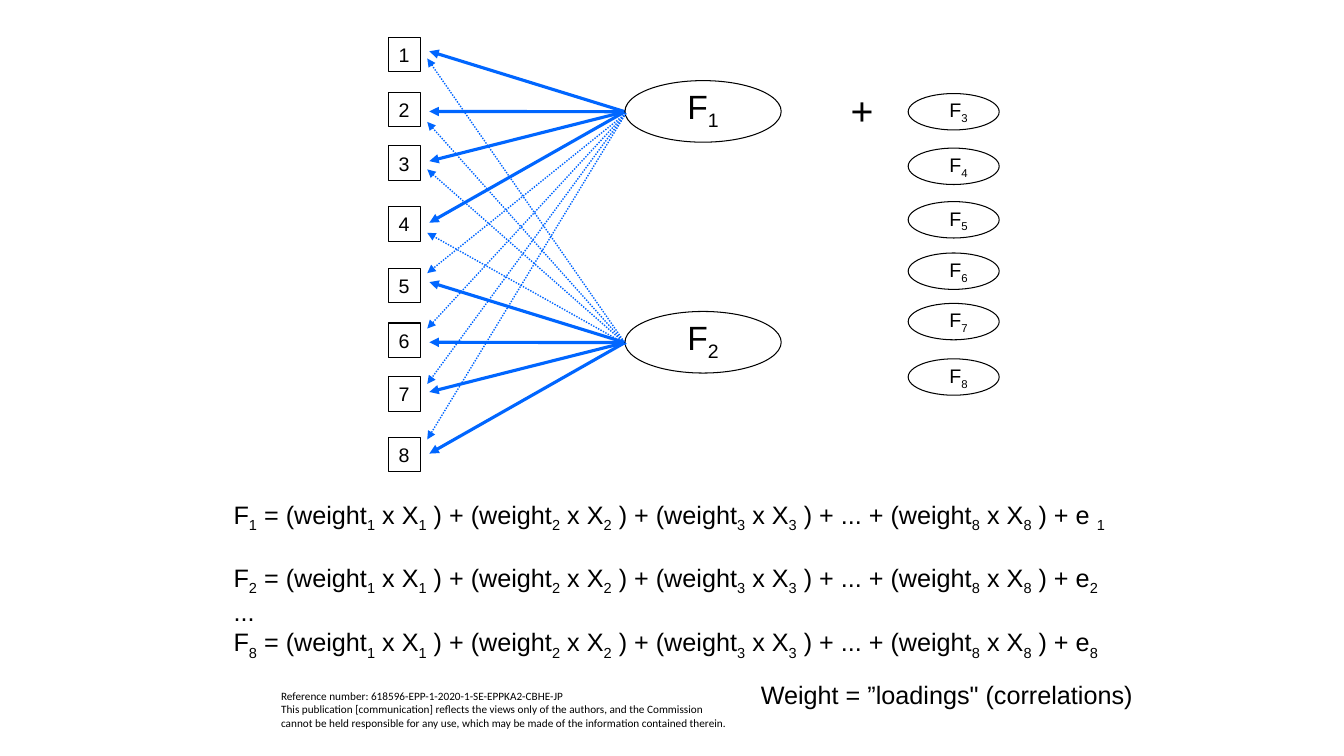
from dataclasses import dataclass

from lxml import etree
from pptx import Presentation
from pptx.dml.color import RGBColor
from pptx.enum import dml, shapes, text
from pptx.oxml import ns
from pptx.util import Pt


@dataclass(frozen=True)
class Theme:
    ink: RGBColor = RGBColor(0, 0, 0)
    arrow: RGBColor = RGBColor(0x00, 0x66, 0xFF)
    font: str = "Arial"
    footer_font: str = "Calibri"
    factor: int = 24
    item: int = 14
    plus: int = 28
    body: int = 18
    footer: int = 8
    outline: float = 0.75
    strong: float = 2.25
    weak: float = 1


THEME = Theme()


def add_run(p, content, size, font=THEME.font, sub=False):
    r = p.add_run()
    r.text = content
    r.font.size = Pt(size)
    r.font.name = font
    r.font.color.rgb = THEME.ink
    if sub:
        r._r.get_or_add_rPr().set("baseline", "-25000")


def add_subscripted(p, content, size):
    head, *tails = content.split("_")
    add_run(p, head, size)
    for tail in tails:
        add_run(p, tail[0], size, sub=True)
        if tail[1:]:
            add_run(p, tail[1:], size)


def add_textbox(s, x, y, w, h, wrap=True):
    tf = s.shapes.add_textbox(Pt(x), Pt(y), Pt(w), Pt(h)).text_frame
    tf.word_wrap = wrap
    return tf


def add_node(s, kind, x, y, w, h, label, size, margins=(0, 0)):
    sp = s.shapes.add_shape(kind, Pt(x), Pt(y), Pt(w), Pt(h))
    sp.shadow.inherit = False
    sp.fill.background()
    sp.line.color.rgb = THEME.ink
    sp.line.width = Pt(THEME.outline)
    tf = sp.text_frame
    tf.word_wrap = False
    tf.vertical_anchor = text.MSO_ANCHOR.MIDDLE
    tf.margin_top = tf.margin_right = 0
    tf.margin_left, tf.margin_bottom = (Pt(m) for m in margins)
    p = tf.paragraphs[0]
    p.alignment = text.PP_ALIGN.CENTER
    add_subscripted(p, label, size)


def add_arrow(s, x1, y1, x2, y2, width, dotted=False):
    c = s.shapes.add_connector(shapes.MSO_CONNECTOR.STRAIGHT, Pt(x1), Pt(y1), Pt(x2), Pt(y2))
    c.line.color.rgb = THEME.arrow
    c.line.width = Pt(width)
    if dotted:
        c.line.dash_style = dml.MSO_LINE.ROUND_DOT
    etree.SubElement(c.line._get_or_add_ln(), ns.qn("a:tailEnd"), type="triangle")
    etree.SubElement(c._element.spPr, ns.qn("a:effectLst"))


def factor_block(s, x, y, number, first_item, cross_ends):
    oval_x, oval_y = x + 169.2, y + 31
    tip_y = oval_y + 22.2
    for end in (10, 53, 88.5, 132.5):
        add_arrow(s, oval_x, tip_y, x + 29.5, y + end, THEME.strong)
    add_node(s, shapes.MSO_SHAPE.OVAL, oval_x, oval_y, 111.6, 44,
             f"F_{number}", THEME.factor, (0, 3.6))
    for i, top in enumerate((0, 39.2, 77.6, 120.8)):
        add_node(s, shapes.MSO_SHAPE.RECTANGLE, x, y + top, 23, 24.8,
                 str(first_item + i), THEME.item)
    for end in cross_ends:
        add_arrow(s, oval_x + 0.7, tip_y + 1.2, x + 28, y + end, THEME.weak, dotted=True)


def extra_factors(s, x, y):
    tf = add_textbox(s, x, y, 31, 41, wrap=False)
    add_run(tf.paragraphs[0], "+", THEME.plus)
    for number, top in enumerate((8.5, 47.5, 85.7, 122.4, 158.4, 198), 3):
        add_node(s, shapes.MSO_SHAPE.OVAL, x + 48.2, y + top, 65, 26,
                 f"F_{number}", THEME.item, (7, 0))


def equations(s, x, y, w, h):
    weighted = " + ".join(f"(weight_{i} x X_{i} )" for i in (1, 2, 3))
    total = f"{weighted} + ... + (weight_8 x X_8 )"
    lines = [f"F_1 = {total} + e _1", f"F_2 = {total} + e_2", "...", f"F_8 = {total} + e_8"]
    tf = add_textbox(s, x, y, w, h)
    for i, line in enumerate(lines):
        p = tf.add_paragraph() if i else tf.paragraphs[0]
        if i == 1:
            p.space_before = Pt(20.7)
        add_subscripted(p, line, THEME.body)


def loadings_note(s, x, y, w, h):
    tf = add_textbox(s, x, y, w, h, wrap=False)
    add_run(tf.paragraphs[0], "Weight = ”loadings\" (correlations)", THEME.body)


def footer(s, x, y, w, h):
    p = add_textbox(s, x, y, w, h).paragraphs[0]
    add_run(p, "Reference number: 618596-EPP-1-2020-1-SE-EPPKA2-CBHE-JP",
            THEME.footer, THEME.footer_font)
    p.add_line_break()
    add_run(p, "This publication [communication] reflects the views only of the authors, "
               "and the Commission cannot be held responsible for any use, which may be made "
               "of the information contained therein.", THEME.footer, THEME.footer_font)


def main():
    prs = Presentation()
    prs.slide_width, prs.slide_height = Pt(960), Pt(540)
    s = prs.slides.add_slide(prs.slide_layouts[6])
    footer(s, 193.7, 488.9, 334, 36)
    loadings_note(s, 536.4, 481.7, 285.8, 29)
    factor_block(s, 277.2, 26.6, 1, 1, [168.5 + 39.6 * i for i in range(4)])
    factor_block(s, 277.2, 191.5, 2, 5, [-25.2, -70.5, -104.4, -149.7])
    extra_factors(s, 600.5, 58.3)
    equations(s, 159.8, 352.8, 703.4, 160)
    prs.save("out.pptx")


if __name__ == "__main__":
    main()
